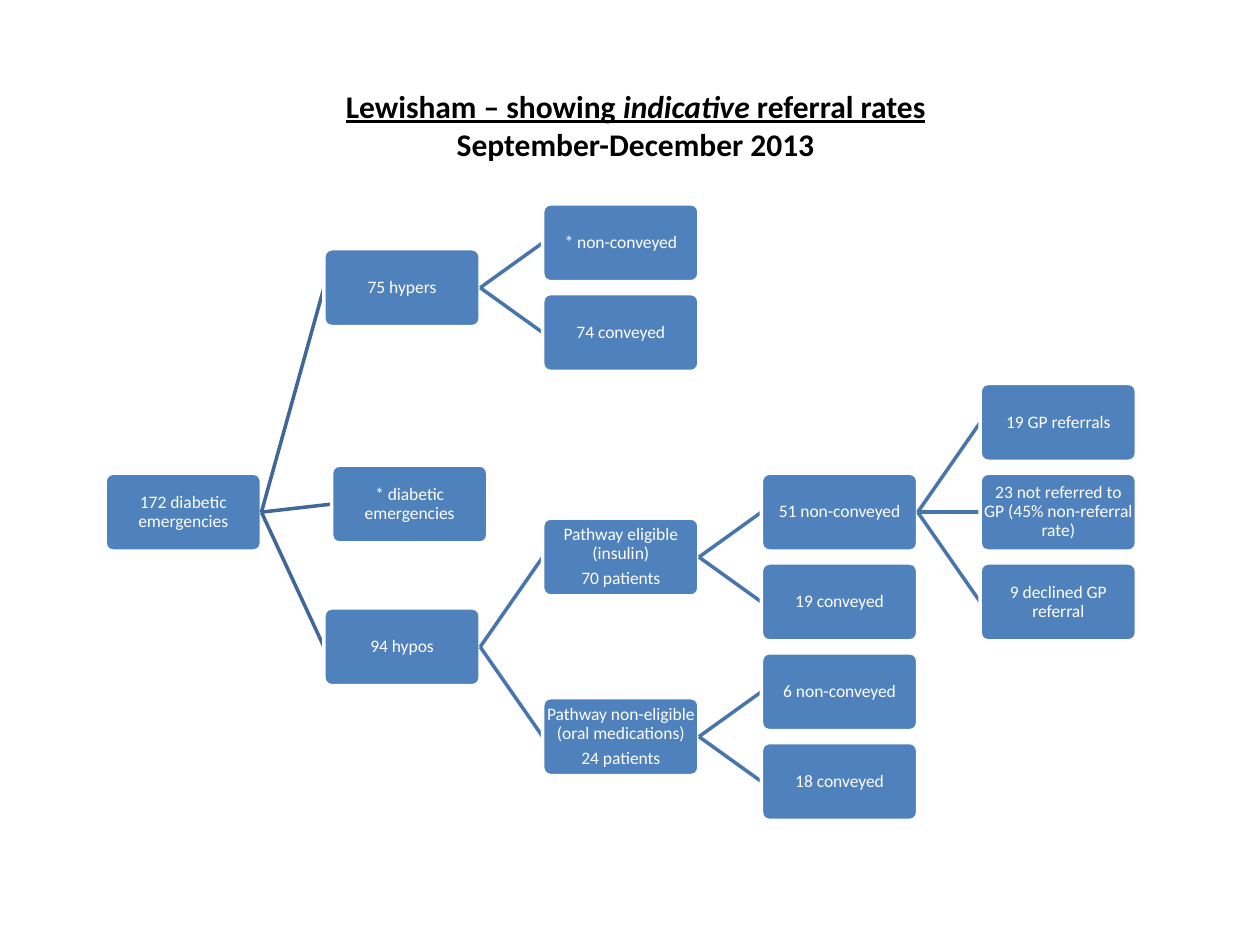
from lxml import etree
from pptx import Presentation
from pptx.dml.color import RGBColor
from pptx.enum import shapes, text
from pptx.oxml import ns
from pptx.util import Cm, Pt

BLUE = RGBColor(0x4F, 0x81, 0xBD)
FIRST_LINK = RGBColor(0x3F, 0x67, 0x97)
LINK = RGBColor(0x48, 0x75, 0xAC)
WHITE = RGBColor(0xFF, 0xFF, 0xFF)
BLACK = RGBColor(0x00, 0x00, 0x00)

LEFT, TOP = 2.12, 4.11
BOX_W, BOX_H = 3.15, 1.57
COL_STEP, ROW_STEP = 4.41, 1.81

NODES = [
    ("root", None, 0, 3, "172 diabetic emergencies"),
    ("hypers", "root", 1, 0.5, "75 hypers"),
    ("hypers stay", "hypers", 2, 0, "* non-conveyed"),
    ("hypers go", "hypers", 2, 1, "74 conveyed"),
    ("hypos", "root", 1, 4.5, "94 hypos"),
    ("eligible", "hypos", 2, 3.5, "Pathway eligible (insulin)\n70 patients"),
    ("eligible stay", "eligible", 3, 3, "51 non-conveyed"),
    ("referred", "eligible stay", 4, 2, "19 GP referrals"),
    ("not referred", "eligible stay", 4, 3, "23 not referred to GP (45% non-referral rate)"),
    ("declined", "eligible stay", 4, 4, "9 declined GP referral"),
    ("eligible go", "eligible", 3, 4, "19 conveyed"),
    ("non-eligible", "hypos", 2, 5.5, "Pathway non-eligible (oral medications)\n24 patients"),
    ("non-eligible stay", "non-eligible", 3, 5, "6 non-conveyed"),
    ("non-eligible go", "non-eligible", 3, 6, "18 conveyed"),
    ("other", "root", 1.035, 2.91, "* diabetic emergencies"),
]

prs = Presentation()
prs.slide_width, prs.slide_height = Cm(25.4), Cm(19.05)
s = prs.slides.add_slide(prs.slide_layouts[6])

tf = s.shapes.add_textbox(Cm(3.91), Cm(1.63), Cm(17.81), Cm(1.8)).text_frame
tf.word_wrap = True
TITLE = [
    [("Lewisham – showing ", False), ("indicative", True), (" referral rates", False)],
    [("September-December 2013", False)],
]
for i, parts in enumerate(TITLE):
    p = tf.paragraphs[0] if i == 0 else tf.add_paragraph()
    p.alignment = text.PP_ALIGN.CENTER
    for words, italic in parts:
        r = p.add_run()
        r.text = words
        r.font.name, r.font.size = "Calibri", Pt(18)
        r.font.bold, r.font.italic, r.font.underline = True, italic, i == 0
        r.font.color.rgb = BLACK

boxes = {}
for name, parent, col, row, label in NODES:
    x, y = LEFT + col * COL_STEP, TOP + row * ROW_STEP
    if parent:
        ln = s.shapes.add_connector(shapes.MSO_CONNECTOR.STRAIGHT, 0, 0, 0, 0)
        ln.line.color.rgb = FIRST_LINK if parent == "root" else LINK
        ln.line.width = Pt(2)
        etree.SubElement(ln._element.spPr, ns.qn("a:effectLst"))

    sp = s.shapes.add_shape(
        shapes.MSO_SHAPE.ROUNDED_RECTANGLE, Cm(x), Cm(y), Cm(BOX_W), Cm(BOX_H))
    boxes[name] = sp
    sp.adjustments[0] = 0.1
    sp.shadow.inherit = False
    sp.fill.solid()
    sp.fill.fore_color.rgb = BLUE
    sp.line.color.rgb = WHITE
    sp.line.width = Pt(2)

    tf = sp.text_frame
    tf.text = label
    tf.word_wrap = True
    tf.vertical_anchor = text.MSO_ANCHOR.MIDDLE
    tf.margin_left = tf.margin_right = tf.margin_top = tf.margin_bottom = Cm(0.03)
    for p in tf.paragraphs:
        p.alignment = text.PP_ALIGN.CENTER
        p.line_spacing = 0.9
        p.space_after = Pt(3.5)
        for r in p.runs:
            r.font.name, r.font.size = "Calibri", Pt(10)
            r.font.color.rgb = WHITE

    if parent:
        ln.begin_connect(boxes[parent], 3)
        ln.end_connect(sp, 1)

prs.save("out.pptx")
